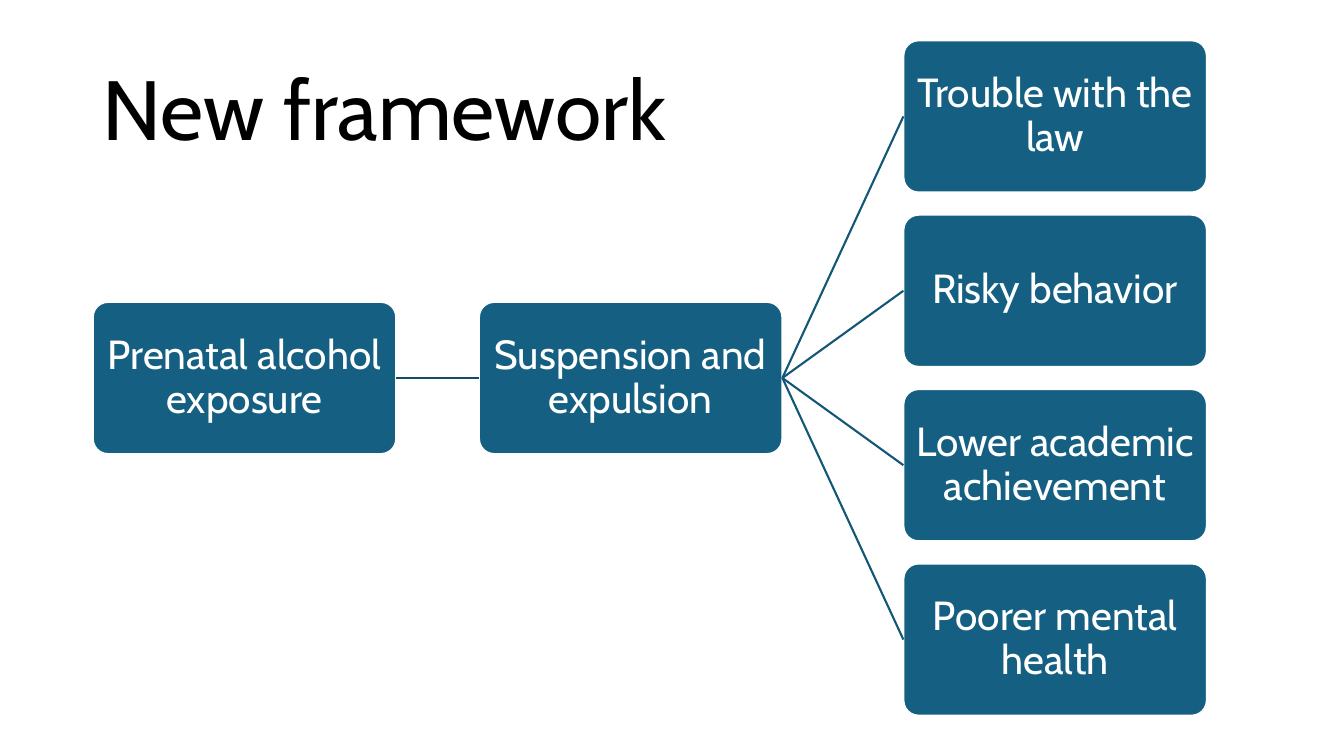
"""Builds the slide that shows the new framework as a branching tree."""
from dataclasses import dataclass

from lxml import etree
from pptx import Presentation
from pptx.dml.color import RGBColor
from pptx.enum.shapes import MSO_CONNECTOR, MSO_SHAPE
from pptx.enum.text import MSO_ANCHOR, PP_ALIGN
from pptx.oxml.ns import qn
from pptx.util import Inches, Pt

ROUND = MSO_SHAPE.ROUNDED_RECTANGLE
STRAIGHT = MSO_CONNECTOR.STRAIGHT
MIDDLE = MSO_ANCHOR.MIDDLE
LEFT, CENTER = PP_ALIGN.LEFT, PP_ALIGN.CENTER
LEFT_SIDE, RIGHT_SIDE = 1, 3

BOX_W, BOX_H = 3.01, 1.51
CAUSE_X, EVENT_X, RESULT_X = 0.92, 4.75, 8.96
TOP, STEP = 0.4, 1.73
RESULTS = ["Trouble with the law", "Risky behavior",
           "Lower academic achievement", "Poorer mental health"]


@dataclass(frozen=True)
class Theme:
    font: str = "Cabin"
    title_size: int = 60
    box_size: int = 29
    line_width: float = 1.5
    ink: str = "000000"
    paper: str = "FFFFFF"
    fill: str = "156082"
    stem: str = "114D68"
    branch: str = "135776"


class Board:
    def __init__(self, slide, theme):
        self.slide = slide
        self.theme = theme

    def label(self, frame, text, size, color, align):
        frame.word_wrap = True
        frame.vertical_anchor = MIDDLE
        frame.text = text
        para = frame.paragraphs[0]
        para.alignment = align
        para.line_spacing = 0.9
        para.font.name = self.theme.font
        para.font.size = Pt(size)
        para.font.color.rgb = RGBColor.from_string(color)

    def stroke(self, line, color):
        line.color.rgb = RGBColor.from_string(color)
        line.width = Pt(self.theme.line_width)

    def title(self, text, left, top, width, height):
        shape = self.slide.shapes.title
        shape.left, shape.top = Inches(left), Inches(top)
        shape.width, shape.height = Inches(width), Inches(height)
        self.label(shape.text_frame, text, self.theme.title_size,
                   self.theme.ink, LEFT)

    def box(self, text, left, top):
        shape = self.slide.shapes.add_shape(
            ROUND, Inches(left), Inches(top), Inches(BOX_W), Inches(BOX_H))
        shape.adjustments[0] = 0.1
        shape.shadow.inherit = False
        shape.fill.solid()
        shape.fill.fore_color.rgb = RGBColor.from_string(self.theme.fill)
        self.stroke(shape.line, self.theme.paper)
        frame = shape.text_frame
        frame.margin_left = frame.margin_right = Inches(0.02)
        frame.margin_top = frame.margin_bottom = Inches(0.02)
        self.label(frame, text, self.theme.box_size, self.theme.paper, CENTER)
        return shape

    def link(self, start, end, color):
        line = self.slide.shapes.add_connector(STRAIGHT, 0, 0, 0, 0)
        line.begin_connect(start, RIGHT_SIDE)
        line.end_connect(end, LEFT_SIDE)
        self.stroke(line.line, color)
        etree.SubElement(line._element.spPr, qn("a:effectLst"))


def main():
    deck = Presentation()
    deck.slide_width, deck.slide_height = Inches(13.33), Inches(7.5)
    theme = Theme()
    board = Board(deck.slides.add_slide(deck.slide_layouts[5]), theme)

    board.title("New framework", CAUSE_X, TOP, 11.5, 1.45)
    middle = TOP + STEP * (len(RESULTS) - 1) / 2
    cause = board.box("Prenatal alcohol exposure", CAUSE_X, middle)
    event = board.box("Suspension and expulsion", EVENT_X, middle)
    board.link(cause, event, theme.stem)
    for row, text in enumerate(RESULTS):
        result = board.box(text, RESULT_X, TOP + row * STEP)
        board.link(event, result, theme.branch)

    deck.save("out.pptx")


if __name__ == "__main__":
    main()
